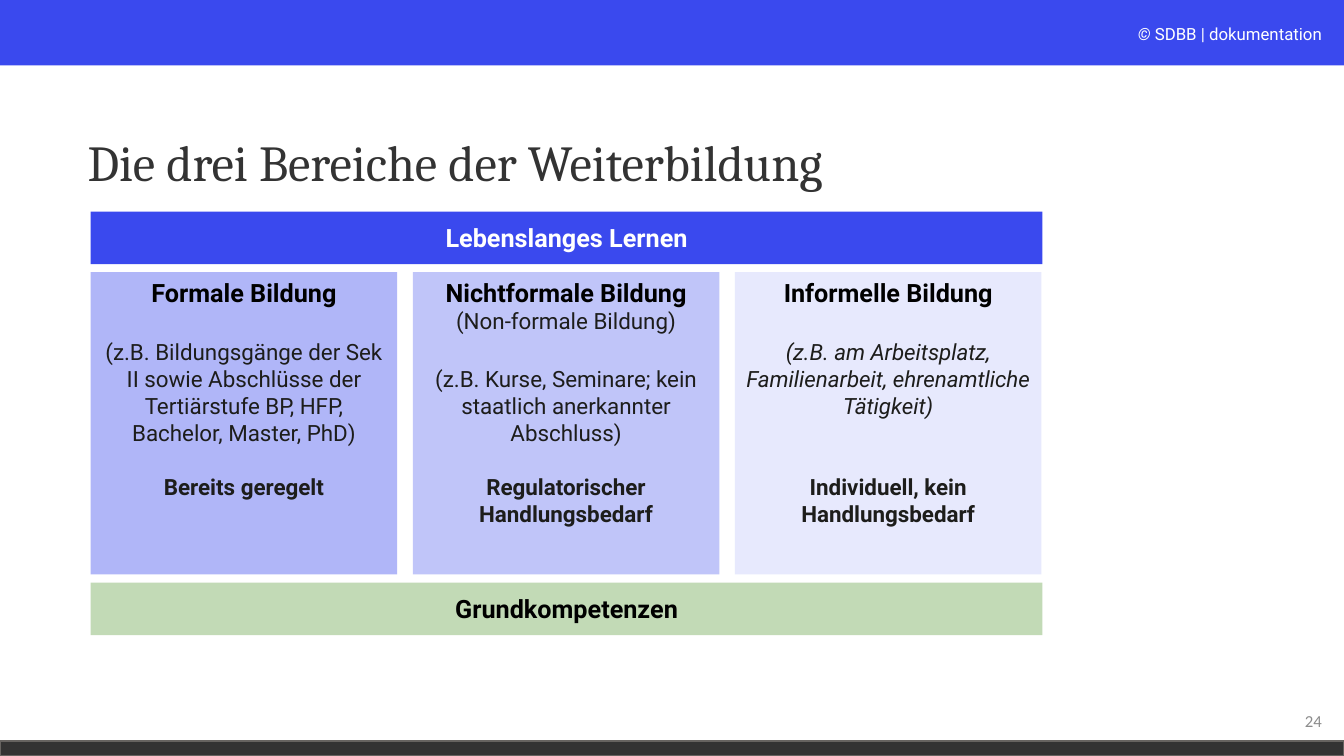
from pptx import Presentation
from pptx import util as u
from pptx.dml.color import RGBColor
from pptx.enum import shapes, text

HEX = {"blue": "3A49EE", "dark": "333333", "edge": "666360", "white": "FFFFFF",
       "grey": "8C8C8C", "black": "000000", "ink": "1D1D1B", "green": "C2DAB6",
       "formal": "B0B6F8", "non": "C0C5F9", "free": "E7E9FD"}

TITLE = "Die drei Bereiche der Weiterbildung"
OWNER = ("© ", "SDBB | dokumentation")
PAGE = "24"
BANDS = [("Lebenslanges Lernen", 2.1, "blue", "white"),
         ("Grundkompetenzen", 5.78, "green", "black")]
AREAS = [
    ("formal", [
        ("Formale Bildung", "head", 0),
        ("(z.B. Bildungsgänge der Sek II sowie Abschlüsse der Tertiärstufe BP, HFP, "
         "Bachelor, Master, PhD)", "body", 22),
        ("Bereits geregelt", "bold", 19.5)]),
    ("non", [
        ("Nichtformale Bildung", "head", 0),
        ("(Non-formale Bildung)", "body", 0),
        ("(z.B. Kurse, Seminare; kein staatlich anerkannter Abschluss)", "body", 22),
        ("Regulatorischer Handlungsbedarf", "bold", 19.5)]),
    ("free", [
        ("Informelle Bildung", "head", 0),
        ("(z.B. am Arbeitsplatz, Familienarbeit, ehrenamtliche Tätigkeit)", "slant", 22),
        ("Individuell, kein Handlungsbedarf", "bold", 39)]),
]
STYLES = {"head": (18, "black", True, False), "body": (16, "ink", False, False),
          "bold": (16, "ink", True, False), "slant": (16, "ink", False, True)}
LEFT, WIDE, COL, STEP = 0.9, 9.44, 3.04, 3.195
MID, TOP = text.MSO_ANCHOR.MIDDLE, text.MSO_ANCHOR.TOP
ALIGN = text.PP_ALIGN


def tint(name):
    """Return the named colour."""
    return RGBColor.from_string(HEX[name])


def style(run, size, color, bold=False, slant=False, face="Roboto"):
    """Format one run."""
    font = run.font
    font.size, font.name, font.bold, font.italic = u.Pt(size), face, bold, slant
    font.color.rgb = tint(color)


def block(slide, spot, fill, edge=None):
    """Add a filled rectangle."""
    box = slide.shapes.add_shape(shapes.MSO_SHAPE.RECTANGLE, *map(u.Inches, spot))
    box.shadow.inherit = False
    box.fill.solid()
    box.fill.fore_color.rgb = tint(fill)
    if edge:
        box.line.color.rgb = tint(edge)
        box.line.width = u.Pt(1)
    else:
        box.line.fill.background()
    return box


def label(slide, spot, words, align, anchor):
    """Add a text box and return its paragraph."""
    frame = slide.shapes.add_textbox(*map(u.Inches, spot)).text_frame
    frame.word_wrap = True
    frame.vertical_anchor = anchor
    para = frame.paragraphs[0]
    para.text = words
    para.alignment = align
    return para


def write(box, lines, anchor):
    """Fill a block with centred, styled paragraphs."""
    frame = box.text_frame
    frame.word_wrap = True
    frame.vertical_anchor = anchor
    frame.text = "\n".join(line[0] for line in lines)
    for para, (_, look, gap) in zip(frame.paragraphs, lines):
        para.alignment = ALIGN.CENTER
        if gap:
            para.space_before = u.Pt(gap)
        style(para.runs[0], *STYLES[look])


def main():
    """Build and save the slide."""
    deck = Presentation()
    deck.slide_width, deck.slide_height = u.Inches(13.33), u.Inches(7.5)
    slide = deck.slides.add_slide(deck.slide_layouts[6])

    block(slide, (0, 0, 13.33, 0.65), "blue")
    block(slide, (0, 7.35, 13.33, 0.15), "dark", "edge")
    para = label(slide, (8.62, 0.19, 4.59, 0.3), OWNER[0], ALIGN.RIGHT, TOP)
    para.add_run().text = OWNER[1]
    for run, slant in zip(para.runs, (True, False)):
        style(run, 12, "white", slant=slant)
    para = label(slide, (10.21, 6.95, 3, 0.4), PAGE, ALIGN.RIGHT, MID)
    style(para.runs[0], 12, "grey", face="Calibri")
    para = label(slide, (0.77, 0.91, 8.82, 1.45), TITLE, ALIGN.LEFT, MID)
    para.line_spacing = 0.9
    style(para.runs[0], 36, "dark", face="Cambria")

    for words, top, fill, color in BANDS:
        box = block(slide, (LEFT, top, WIDE, 0.52), fill)
        write(box, [(words, "head", 0)], MID)
        box.text_frame.paragraphs[0].runs[0].font.color.rgb = tint(color)
    for i, (fill, lines) in enumerate(AREAS):
        write(block(slide, (LEFT + i * STEP, 2.7, COL, 3), fill), lines, TOP)

    deck.save("out.pptx")


if __name__ == "__main__":
    main()
